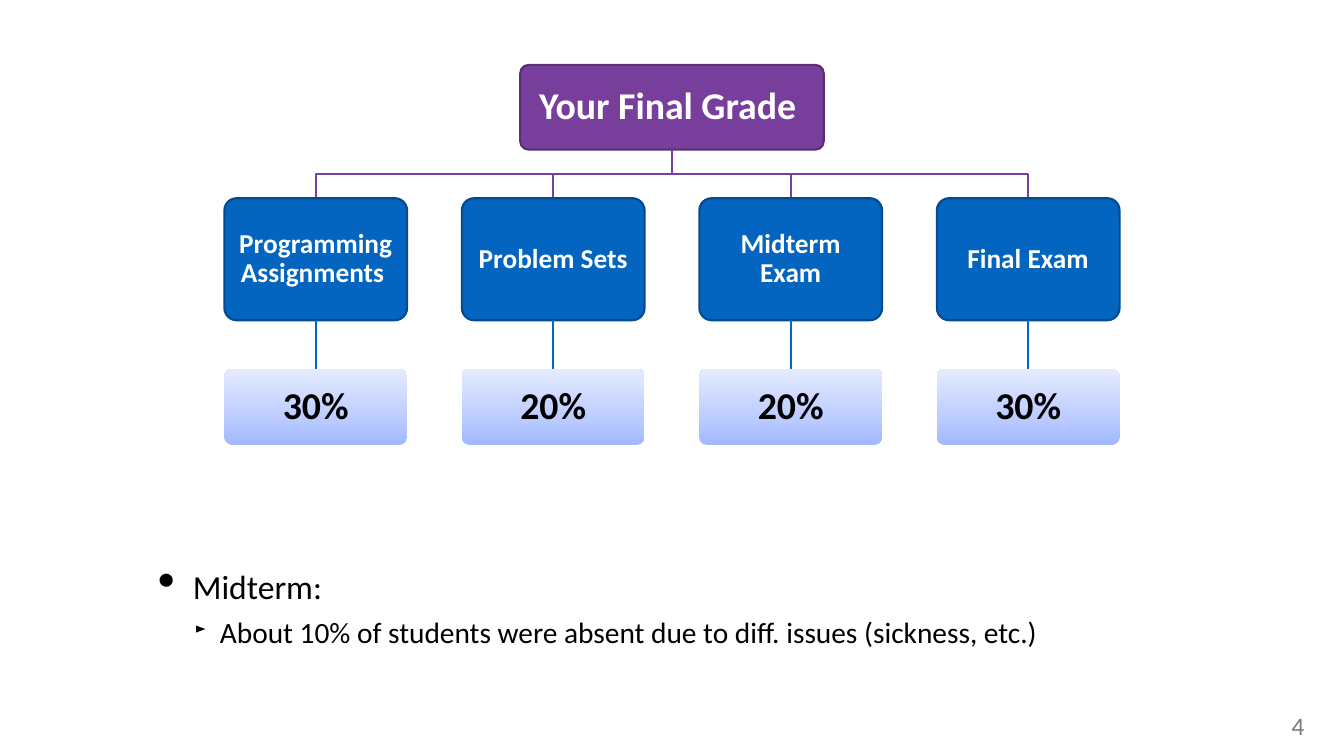
import pptx
import pptx.util
import pptx.dml.color
import pptx.enum.shapes
import pptx.enum.text
import pptx.oxml
import pptx.oxml.ns

Cm = pptx.util.Cm
Pt = pptx.util.Pt
RGB = pptx.dml.color.RGBColor
KIND = pptx.enum.shapes.MSO_SHAPE.ROUNDED_RECTANGLE
LINE = pptx.enum.shapes.MSO_CONNECTOR.STRAIGHT
MID = pptx.enum.text.MSO_ANCHOR.MIDDLE
CENTER = pptx.enum.text.PP_ALIGN.CENTER

PURPLE = RGB(0x77, 0x3F, 0x9B)
PLUM = RGB(0x58, 0x2F, 0x73)
BLUE = RGB(0x03, 0x65, 0xC0)
NAVY = RGB(0x02, 0x4B, 0x8E)
WHITE = RGB(0xFF, 0xFF, 0xFF)
BLACK = RGB(0, 0, 0)
GRAY = RGB(0x7A, 0x7A, 0x7A)
FADE = [(0, RGB(0xA0, 0xB8, 0xFF)), (35, RGB(0xBC, 0xCC, 0xFF)), (100, RGB(0xE5, 0xEB, 0xFF))]

ROOT = "Your Final Grade "
PARTS = [
    ("Programming Assignments ", "30%"),
    ("Problem Sets", "20%"),
    ("Midterm Exam", "20%"),
    ("Final Exam", "30%"),
]
NOTES = [
    dict(text="Midterm:", size=32, level=0, left=2.06, hang=1.17, mark="•", scale=150),
    dict(text="About 10% of students were absent due to diff. issues (sickness, etc.)",
         size=28, level=1, left=2.97, hang=0.84, mark="►", scale=50),
]
PAGE = "4"

WIDE, HIGH = 45.16, 25.4
AXIS = WIDE / 2
PITCH = 7.98
ROWS = {
    "root": dict(top=2.18, wide=10.2, high=2.85, pad=0.38, size=36, ink=WHITE, fill=PURPLE, edge=PLUM),
    "part": dict(top=6.66, wide=6.14, high=4.1, pad=0.28, size=26, ink=WHITE, fill=BLUE, edge=NAVY),
    "share": dict(top=12.39, wide=6.14, high=2.56, pad=0.38, size=36, ink=BLACK, fill=None, edge=None),
}


def set_all(item, **form):
    for name, value in form.items():
        setattr(item, name, value)


def write(para, text, size, ink, bold=False):
    run = para.add_run()
    run.text = text
    set_all(run.font, name="Calibri", size=Pt(size), bold=bold)
    run.font.color.rgb = ink


def pad_all(frame, pad, **form):
    sides = ("left", "right", "top", "bottom")
    set_all(frame, **{"margin_" + side: Cm(pad) for side in sides}, **form)


def fade(shape):
    stops = "".join(f'<a:gs pos="{pos * 1000}"><a:srgbClr val="{tint}"/></a:gs>' for pos, tint in FADE)
    grad = pptx.oxml.parse_xml(
        f'<a:gradFill {pptx.oxml.ns.nsdecls("a")} rotWithShape="1"><a:gsLst>{stops}</a:gsLst>'
        '<a:lin ang="16200000" scaled="0"/></a:gradFill>')
    shape._element.spPr.find(pptx.oxml.ns.qn("a:prstGeom")).addnext(grad)


def stroke(line, ink):
    line.color.rgb = ink
    line.width = Pt(2)


def add_box(shapes, mid, row, text):
    look = ROWS[row]
    box = shapes.add_shape(KIND, Cm(mid - look["wide"] / 2), Cm(look["top"]),
                           Cm(look["wide"]), Cm(look["high"]))
    box.shadow.inherit = False
    box.adjustments[0] = 0.1
    if look["fill"]:
        box.fill.solid()
        box.fill.fore_color.rgb = look["fill"]
        stroke(box.line, look["edge"])
    else:
        box.line.fill.background()
        fade(box)
    pad_all(box.text_frame, look["pad"], vertical_anchor=MID, word_wrap=True)
    para = box.text_frame.paragraphs[0]
    set_all(para, alignment=CENTER, line_spacing=0.9)
    write(para, text, look["size"], look["ink"], True)


def foot(row):
    return ROWS[row]["top"] + ROWS[row]["high"]


def add_branch(shapes, mid):
    start, end = foot("root"), ROWS["part"]["top"]
    bend = (start + end) / 2
    pen = shapes.build_freeform(Cm(AXIS), Cm(start))
    spots = [(AXIS, bend), (mid, bend), (mid, end)]
    pen.add_line_segments([(Cm(x), Cm(y)) for x, y in spots], close=False)
    branch = pen.convert_to_shape()
    branch.shadow.inherit = False
    branch.fill.background()
    stroke(branch.line, PURPLE)


def add_stem(shapes, mid):
    stem = shapes.add_connector(LINE, Cm(mid), Cm(foot("part")), Cm(mid), Cm(ROWS["share"]["top"]))
    stroke(stem.line, BLUE)
    stem._element.spPr.append(pptx.oxml.parse_xml(f'<a:effectLst {pptx.oxml.ns.nsdecls("a")}/>'))


def add_notes(shapes):
    frame = shapes.add_textbox(Cm(4.42), Cm(19.02), Cm(36.35), Cm(6.38)).text_frame
    pad_all(frame, 0, word_wrap=True)
    for rank, note in enumerate(NOTES):
        para = frame.add_paragraph() if rank else frame.paragraphs[0]
        set_all(para, level=note["level"], space_before=Pt(7))
        write(para, note["text"], note["size"], BLACK)
        props = para._p.get_or_add_pPr()
        props.set("marL", str(Cm(note["left"])))
        props.set("indent", str(-Cm(note["hang"])))
        for tag, key, value in (("buSzPct", "val", note["scale"] * 1000), ("buChar", "char", note["mark"])):
            props.append(pptx.oxml.parse_xml(
                f'<a:{tag} {pptx.oxml.ns.nsdecls("a")} {key}="{value}"/>'))


def add_page(shapes):
    frame = shapes.add_textbox(Cm(43.03), Cm(23.85), Cm(1.17), Cm(1.27)).text_frame
    pad_all(frame, 0, word_wrap=False)
    frame.paragraphs[0].alignment = CENTER
    write(frame.paragraphs[0], PAGE, 24, GRAY)


def main():
    deck = pptx.Presentation()
    set_all(deck, slide_width=Cm(WIDE), slide_height=Cm(HIGH))
    shapes = deck.slides.add_slide(deck.slide_layouts[6]).shapes
    add_page(shapes)
    add_notes(shapes)
    add_box(shapes, AXIS, "root", ROOT)
    for rank, (part, share) in enumerate(PARTS):
        mid = AXIS + (rank - (len(PARTS) - 1) / 2) * PITCH
        add_branch(shapes, mid)
        add_box(shapes, mid, "part", part)
        add_stem(shapes, mid)
        add_box(shapes, mid, "share", share)
    deck.save("out.pptx")


if __name__ == "__main__":
    main()
